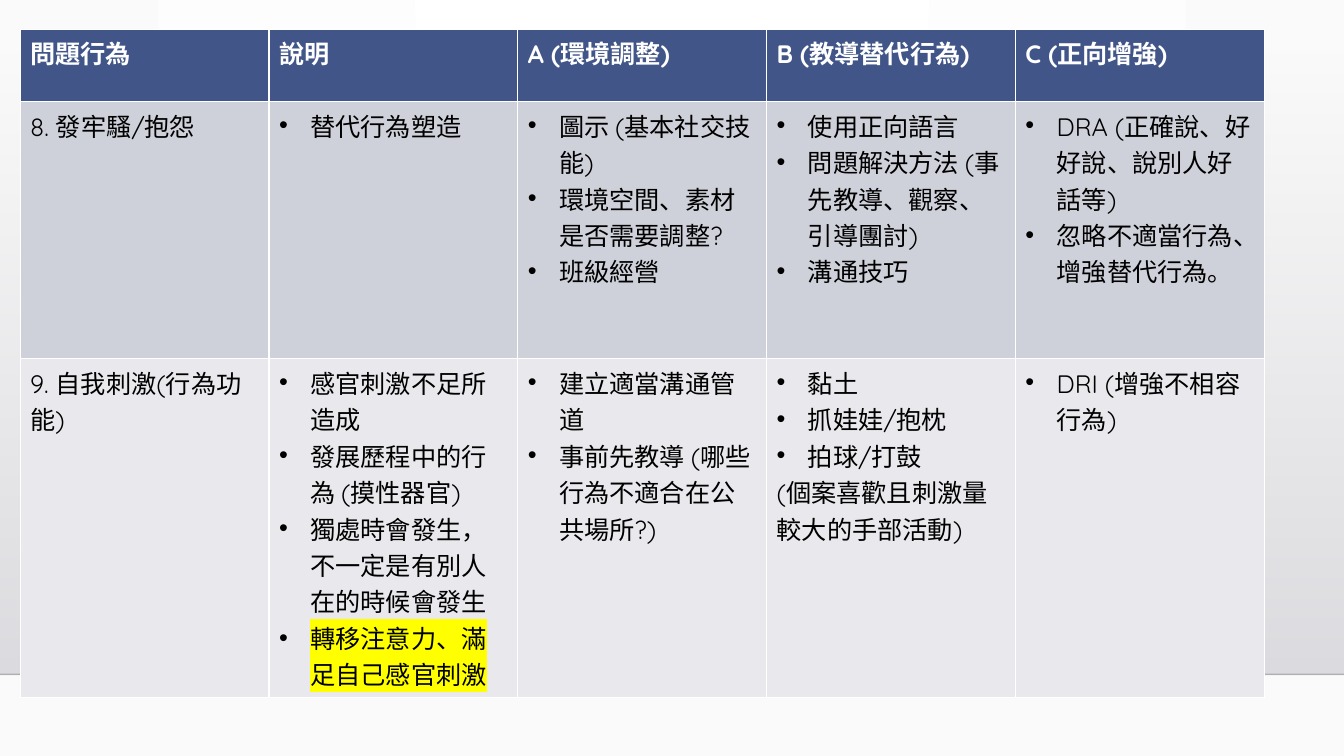
from pptx import Presentation
from pptx.dml.color import RGBColor
from pptx.enum.shapes import MSO_CONNECTOR, MSO_SHAPE
from pptx.oxml import parse_xml
from pptx.oxml.ns import nsdecls, qn
from pptx.util import Inches, Pt


def rgb(code):
    return RGBColor.from_string(code)


def make(tag, attrs="", inner=""):
    return parse_xml(f"<a:{tag} {nsdecls('a')} {attrs}>{inner}</a:{tag}>")


deck = Presentation()
deck.slide_width = Inches(13.33)
deck.slide_height = Inches(7.5)
slide = deck.slides.add_slide(deck.slide_layouts[6])

# Background: soft radial gradient
fill = slide.background.fill
fill.gradient()
for stop, code in zip(fill.gradient_stops, ["FFFFFF", "FAFAFA"]):
    stop.color.rgb = rgb(code)
    stop.position = 0 if code == "FFFFFF" else 1
lin = next(slide._element.iter(qn("a:lin")))
focus = '<a:fillToRect l="43000" t="0" r="43000" b="100000"/>'
lin.getparent().replace(lin, make("path", 'path="circle"', focus))

# Grey wall fading in towards the floor line
wall = slide.shapes.add_shape(
    MSO_SHAPE.RECTANGLE, 0, Inches(0.51), Inches(13.33), Inches(6.18))
wall.shadow.inherit = False
wall.line.fill.background()
wall.fill.gradient()
wall.fill.gradient_angle = 270
for place, (stop, code) in enumerate(
        zip(wall.fill.gradient_stops, ["DCDCE0", "DEDEE2"])):
    stop.color.rgb = rgb(code)
    stop.position = place
next(wall._element.iter(qn("a:srgbClr"))).append(make("alpha", 'val="0"'))

floor = slide.shapes.add_connector(
    MSO_CONNECTOR.STRAIGHT, 0, Inches(6.69), Inches(13.33), Inches(6.69))
floor.line.width = Pt(1)
floor.line.color.rgb = rgb("000001")
next(floor._element.iter(qn("a:srgbClr"))).append(make("alpha", 'val="20000"'))
floor._element.spPr.append(make("effectLst"))

# Table text: "•" starts a bullet, "!" a highlighted bullet
rows = [
    [["問題行為"], ["說明"], ["A (環境調整)"], ["B (教導替代行為)"],
     ["C (正向增強)"]],
    [["8. 發牢騷/抱怨"],
     ["•替代行為塑造"],
     ["•圖示 (基本社交技能)", "•環境空間、素材是否需要調整?", "•班級經營"],
     ["•使用正向語言", "•問題解決方法 (事先教導、觀察、引導團討)",
      "•溝通技巧"],
     ["•DRA (正確說、好好說、說別人好話等)",
      "•忽略不適當行為、增強替代行為。"]],
    [["9. 自我刺激(行為功能)"],
     ["•感官刺激不足所造成", "•發展歷程中的行為 (摸性器官)",
      "•獨處時會發生，不一定是有別人在的時候會發生",
      "!轉移注意力、滿足自己感官刺激"],
     ["•建立適當溝通管道", "•事前先教導 (哪些行為不適合在公共場所?)"],
     ["•黏土", "•抓娃娃/抱枕", "•拍球/打鼓",
      "(個案喜歡且刺激量較大的手部活動)"],
     ["•DRI (增強不相容行為)"]],
]
highs = [0.72, 2.55, 2.8]
fills = ["415588", "CFD1DA", "E9E9ED"]

# Table: the default style supplies the white borders
table = slide.shapes.add_table(
    3, 5, Inches(0.2), Inches(0.29), Inches(12.34), Inches(sum(highs))).table
for col in table.columns:
    col.width = Inches(12.34 / 5)

for r, texts in enumerate(rows):
    table.rows[r].height = Inches(highs[r])
    style = {"size": Pt(18), "name": "Quicksand", "bold": r == 0}
    for c, lines in enumerate(texts):
        cell = table.cell(r, c)
        cell.fill.solid()
        cell.fill.fore_color.rgb = rgb(fills[r])
        for n, text in enumerate(lines):
            frame = cell.text_frame
            para = frame.add_paragraph() if n else frame.paragraphs[0]
            if text[0] in "•!":
                props = para._p.get_or_add_pPr()
                props.set("marL", str(Inches(0.31)))
                props.set("indent", str(Inches(-0.31)))
                props.append(make("buFont", 'typeface="Arial"'))
                props.append(make("buChar", 'char="•"'))
            run = para.add_run()
            run.text = text.lstrip("•!")
            for key, value in style.items():
                setattr(run.font, key, value)
            run.font.color.rgb = rgb("000000" if r else "FFFFFF")
            if text[0] == "!":
                latin = run._r.rPr.find(qn("a:latin"))
                latin.addprevious(
                    make("highlight", "", '<a:srgbClr val="FFFF00"/>'))

deck.save("out.pptx")
